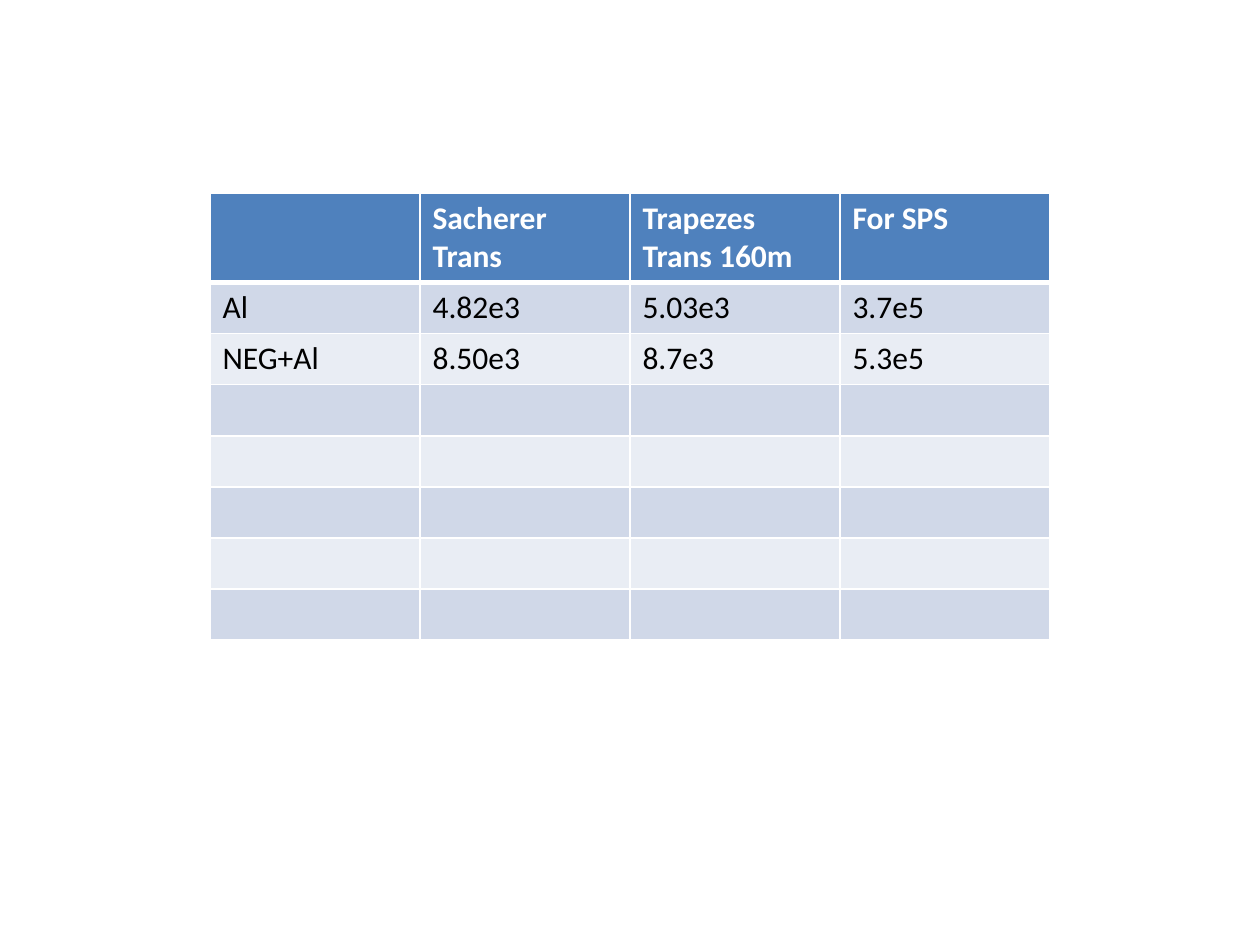
from dataclasses import dataclass

from lxml import etree
from pptx import Presentation
from pptx.dml.color import RGBColor
from pptx.oxml.ns import qn
from pptx.util import Emu, Pt

PX = 914400 / 126
SLIDE_SIZE = (1260, 945)
TABLE_BOX = (210, 193, 840, 445)
ROW_HEIGHT = 51
ROW_COUNT = 8
ROWS = [
    ["", "Sacherer Trans", "Trapezes Trans 160m", "For SPS"],
    ["Al", "4.82e3", "5.03e3", "3.7e5"],
    ["NEG+Al", "8.50e3", "8.7e3", "5.3e5"],
]


@dataclass(frozen=True)
class Theme:
    """Colours, type and line widths of the slide."""
    font: str = "Calibri"
    text_size: int = 18
    header_fill: str = "4F81BD"
    header_text: str = "FFFFFF"
    body_text: str = "000000"
    bands: tuple = ("D0D8E8", "E9EDF4")
    border: str = "FFFFFF"
    thin: int = 1
    thick: int = 3


THEME = Theme()


def px(length):
    """Turn pixels into EMU."""
    return Emu(round(length * PX))


def set_borders(cell, top, bottom):
    """Draw the four cell borders with the given top and bottom widths."""
    properties = cell._tc.get_or_add_tcPr()
    widths = {"a:lnL": THEME.thin, "a:lnR": THEME.thin, "a:lnT": top, "a:lnB": bottom}
    for tag, width in widths.items():
        line = etree.SubElement(properties, qn(tag), w=str(Pt(width)))
        fill = etree.SubElement(line, qn("a:solidFill"))
        etree.SubElement(fill, qn("a:srgbClr"), val=THEME.border)


def fill_cell(cell, text, row):
    """Style one cell by its row and write its text."""
    header = row == 0
    set_borders(
        cell,
        top=THEME.thick if row == 1 else THEME.thin,
        bottom=THEME.thick if header else THEME.thin,
    )
    color = THEME.header_fill if header else THEME.bands[(row - 1) % 2]
    cell.fill.solid()
    cell.fill.fore_color.rgb = RGBColor.from_string(color)
    paragraph = cell.text_frame.paragraphs[0]
    paragraph.font.size = Pt(THEME.text_size)
    if text:
        run = paragraph.add_run()
        run.text = text
        run.font.name = THEME.font
        run.font.size = Pt(THEME.text_size)
        run.font.bold = header
        text_color = THEME.header_text if header else THEME.body_text
        run.font.color.rgb = RGBColor.from_string(text_color)


def add_results_table(slide, box):
    """Place the results table in the box; the header takes the spare height."""
    left, top, width, height = box
    column_count = len(ROWS[0])
    frame = slide.shapes.add_table(
        ROW_COUNT, column_count, px(left), px(top), px(width), px(height)
    )
    table = frame.table
    for column in table.columns:
        column.width = px(width / column_count)
    for index, row in enumerate(table.rows):
        header_height = height - (ROW_COUNT - 1) * ROW_HEIGHT
        row.height = px(ROW_HEIGHT if index else header_height)
        texts = ROWS[index] if index < len(ROWS) else [""] * column_count
        for cell, text in zip(row.cells, texts):
            fill_cell(cell, text, index)


def main():
    """Build and save the presentation."""
    presentation = Presentation()
    presentation.slide_width, presentation.slide_height = map(px, SLIDE_SIZE)
    slide = presentation.slides.add_slide(presentation.slide_layouts[6])
    add_results_table(slide, TABLE_BOX)
    presentation.save("out.pptx")


if __name__ == "__main__":
    main()
